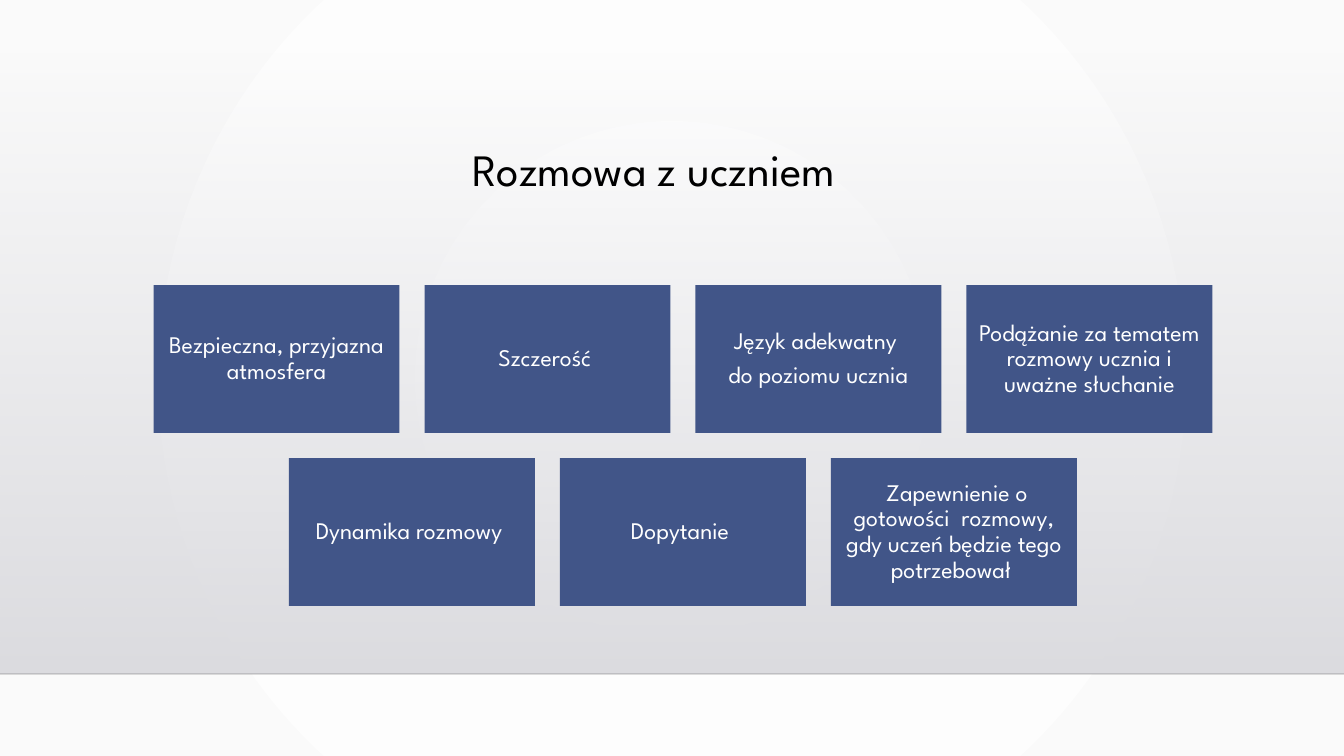
from lxml import etree
from pptx import Presentation
from pptx.dml.color import RGBColor
from pptx.enum.shapes import MSO_CONNECTOR, MSO_SHAPE
from pptx.enum.text import MSO_ANCHOR, PP_ALIGN
from pptx.oxml.ns import qn
from pptx.util import Pt

TITLE = "Rozmowa z uczniem"
ROWS = [
    [
        ["Bezpieczna, przyjazna atmosfera"],
        ["Szczerość "],
        ["Język adekwatny ", "do poziomu ucznia"],
        ["Podążanie za tematem rozmowy ucznia i uważne słuchanie"],
    ],
    [
        ["Dynamika rozmowy "],
        ["Dopytanie "],
        [" Zapewnienie o gotowości  rozmowy, gdy uczeń będzie tego potrzebował "],
    ],
]
COLORS = {
    "center": "FFFFFF", "edge": "FAFAFA",
    "shade_top": "DCDCE0", "shade_bottom": "DEDEE2",
    "floor": "000001", "card": "415588",
    "title": "000000", "card_text": "FFFFFF",
}
FONT = "League Spartan"
RECT = MSO_SHAPE.RECTANGLE
CENTER = PP_ALIGN.CENTER
MIDDLE = MSO_ANCHOR.MIDDLE

EMU_PER_PX = 914400 / 100.8
SLIDE_W, SLIDE_H = 1344, 756
SHADE_TOP, FLOOR_Y = 51, 674
CARD_W, CARD_H, GAP = 246, 148, 25
GRID_CENTER, GRID_TOP = 683, 285
TITLE_BOX = (125, 139, 1058, 67)


def px(n):
    return round(n * EMU_PER_PX)


def rgb(name):
    return RGBColor.from_string(COLORS[name])


def set_alpha(color, percent):
    """Set the opacity of a srgbClr element."""
    etree.SubElement(color, qn("a:alpha")).set("val", str(percent * 1000))


def set_gradient(fill, first, last):
    """Apply a two-stop gradient and return its gradFill element's stops."""
    fill.gradient()
    for stop, name, position in zip(fill.gradient_stops, (first, last), (0, 1)):
        stop.color.rgb = rgb(name)
        stop.position = position


def write(tf, lines, size, color, inset, after=0):
    tf.word_wrap = True
    tf.vertical_anchor = MIDDLE
    tf.margin_left = tf.margin_right = px(inset)
    tf.margin_top = tf.margin_bottom = px(inset)
    for i, line in enumerate(lines):
        p = tf.add_paragraph() if i else tf.paragraphs[0]
        p.alignment = CENTER
        p.line_spacing = 0.9
        p.space_after = Pt(after)
        r = p.add_run()
        r.text = line
        r.font.name = FONT
        r.font.size = Pt(size)
        r.font.color.rgb = rgb(color)


def add_rect(s, x, y, w, h):
    sp = s.shapes.add_shape(RECT, px(x), px(y), px(w), px(h))
    sp.shadow.inherit = False
    sp.line.fill.background()
    return sp


def add_backdrop(s):
    set_gradient(s.background.fill, "center", "edge")
    grad = s.background._cSld.find(".//" + qn("a:gradFill"))
    grad.remove(grad.find(qn("a:lin")))
    radial = etree.SubElement(grad, qn("a:path"))
    radial.set("path", "circle")
    focus = etree.SubElement(radial, qn("a:fillToRect"))
    for side in "ltrb":
        focus.set(side, "50000")

    shade = add_rect(s, 0, SHADE_TOP, SLIDE_W, FLOOR_Y - SHADE_TOP)
    set_gradient(shade.fill, "shade_top", "shade_bottom")
    shade.fill.gradient_angle = 270
    set_alpha(shade._element.spPr.find(".//" + qn("a:srgbClr")), 0)

    floor = s.shapes.add_connector(
        MSO_CONNECTOR.STRAIGHT, 0, px(FLOOR_Y), px(SLIDE_W), px(FLOOR_Y))
    floor.line.width = Pt(1)
    floor.line.color.rgb = rgb("floor")
    sp_pr = floor._element.spPr
    set_alpha(sp_pr.find(".//" + qn("a:srgbClr")), 20)
    etree.SubElement(sp_pr, qn("a:effectLst"))


def add_cards(s):
    for row, cards in enumerate(ROWS):
        row_w = len(cards) * (CARD_W + GAP) - GAP
        left = GRID_CENTER - row_w / 2
        top = GRID_TOP + row * (CARD_H + GAP)
        for col, lines in enumerate(cards):
            sp = add_rect(s, left + col * (CARD_W + GAP), top, CARD_W, CARD_H)
            sp.fill.solid()
            sp.fill.fore_color.rgb = rgb("card")
            write(sp.text_frame, lines, 17, "card_text", 7, after=6)


def main():
    prs = Presentation()
    prs.slide_width, prs.slide_height = px(SLIDE_W), px(SLIDE_H)
    s = prs.slides.add_slide(prs.slide_layouts[6])
    add_backdrop(s)
    title = s.shapes.add_textbox(*map(px, TITLE_BOX))
    write(title.text_frame, [TITLE], 32, "title", 5)
    add_cards(s)
    prs.save("out.pptx")


if __name__ == "__main__":
    main()
